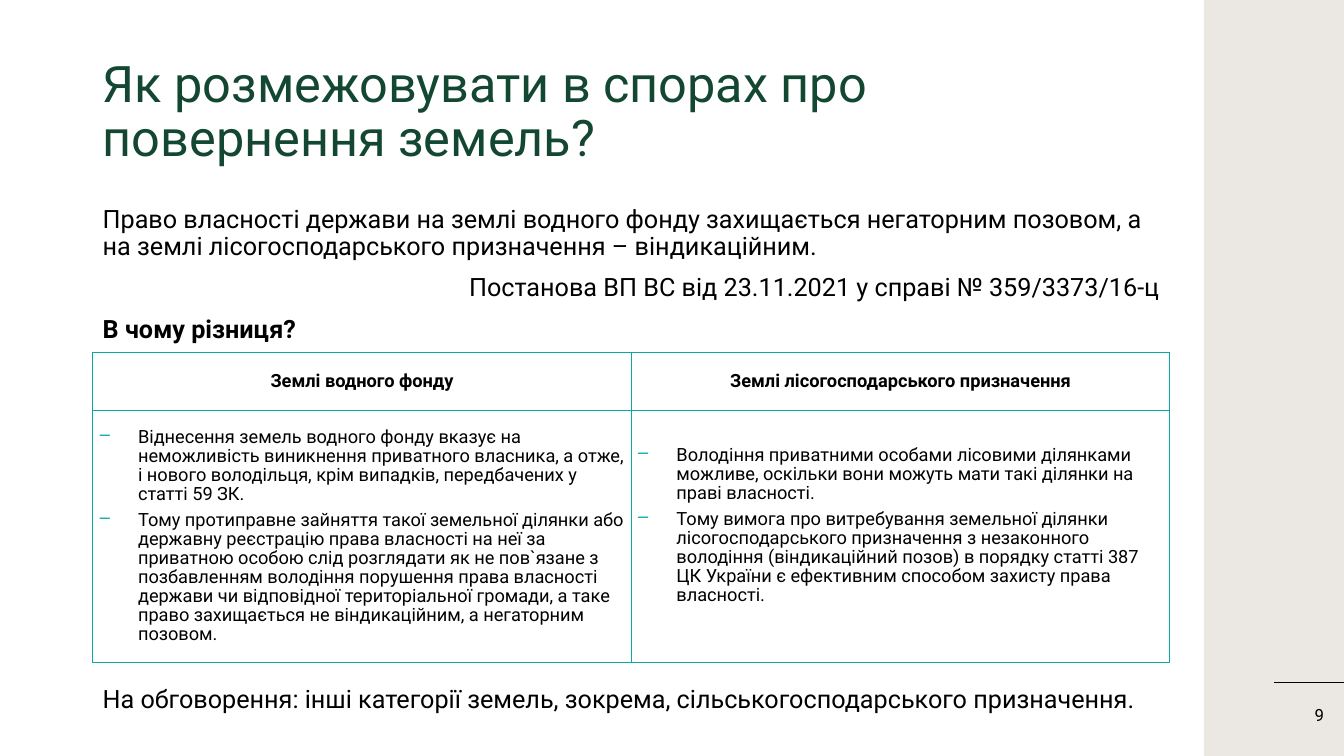
from dataclasses import dataclass

from lxml import etree
from pptx import Presentation
from pptx.dml.color import RGBColor
from pptx.enum import shapes, text
from pptx.oxml import ns
from pptx.util import Inches, Pt

# Content
TITLE = "Як розмежовувати в спорах про повернення земель?"
INTRO = [
    ("Право власності держави на землі водного фонду захищається негаторним позовом, "
     "а на землі лісогосподарського призначення – віндикаційним.", "left", False),
    ("Постанова ВП ВС від 23.11.2021 у справі № 359/3373/16-ц", "right", False),
    ("В чому різниця?", "left", True),
]
LAND_TYPES = [
    ("Землі водного фонду", [
        "Віднесення земель водного фонду вказує на неможливість виникнення приватного "
        "власника, а отже, і нового володільця, крім випадків, передбачених у статті 59 ЗК.",
        "Тому протиправне зайняття такої земельної ділянки або державну реєстрацію права "
        "власності на неї за приватною особою слід розглядати як не пов`язане з "
        "позбавленням володіння порушення права власності держави чи відповідної "
        "територіальної громади, а таке право захищається не віндикаційним, а негаторним "
        "позовом.",
    ], 0),
    ("Землі лісогосподарського призначення", [
        "Володіння приватними особами лісовими ділянками можливе, оскільки вони можуть "
        "мати такі ділянки на праві власності.",
        "Тому вимога про витребування земельної ділянки лісогосподарського призначення з "
        "незаконного володіння (віндикаційний позов) в порядку статті 387 ЦК України є "
        "ефективним способом захисту права власності.",
    ], 0.21),  # last item: space kept free below the text, inches
]
DISCUSSION = [("На обговорення: інші категорії земель, зокрема, "
               "сільськогосподарського призначення.", "left", False)]
PAGE = "9"


@dataclass(frozen=True)
class Theme:
    font: str = "Roboto"
    ink: str = "000000"
    heading: str = "134732"
    accent: str = "0AA7A5"
    band: str = "EBE8E3"
    title_size: int = 36
    body_size: int = 18
    table_size: int = 13
    page_size: int = 12


THEME = Theme()
ALIGN = {"left": text.PP_ALIGN.LEFT, "right": text.PP_ALIGN.RIGHT,
         "center": text.PP_ALIGN.CENTER}
SLIDE_W, SLIDE_H = 13.33, 7.5
LEFT, WIDTH = 0.92, 10.68
BAND_W = 1.39
RULE_W, RULE_Y = 0.69, 6.77


def style(paragraph, size, color=THEME.ink, bold=False, align="left"):
    paragraph.alignment = ALIGN[align]
    font = paragraph.font
    font.name, font.size, font.bold = THEME.font, Pt(size), bold
    font.color.rgb = RGBColor.from_string(color)


def paragraph_at(frame, index):
    return frame.paragraphs[0] if index == 0 else frame.add_paragraph()


def add_xml(parent, xml):
    root = f'<r xmlns:a="{ns.nsuri("a")}">{xml}</r>'
    for element in etree.fromstring(root):
        parent.append(element)


def add_body(slide, top, height, lines):
    frame = slide.shapes.add_textbox(
        Inches(LEFT), Inches(top), Inches(WIDTH), Inches(height)).text_frame
    frame.word_wrap = True
    for i, (words, align, bold) in enumerate(lines):
        paragraph = paragraph_at(frame, i)
        paragraph.text = words
        paragraph.line_spacing = 0.9
        paragraph.space_before = Pt(10 if i else 0)
        style(paragraph, THEME.body_size, bold=bold, align=align)


def format_cell(cell, bottom=0):
    cell.vertical_anchor = text.MSO_ANCHOR.MIDDLE
    cell.margin_left = cell.margin_right = Inches(0.07)
    cell.margin_top, cell.margin_bottom = 0, Inches(bottom)
    for side in "LRTB":
        add_xml(cell._tc.get_or_add_tcPr(),
                f'<a:ln{side} w="{Pt(1)}"><a:solidFill><a:srgbClr val="{THEME.accent}"/>'
                f'</a:solidFill></a:ln{side}>')
    cell.fill.background()


def add_bullet(paragraph):
    properties = paragraph._p.get_or_add_pPr()
    properties.set("marL", str(Inches(0.38)))
    properties.set("indent", str(-Inches(0.38)))
    add_xml(properties,
            f'<a:buClr><a:srgbClr val="{THEME.accent}"/></a:buClr><a:buChar char="–"/>'
            f'<a:tabLst><a:tab pos="{Inches(0.22)}" algn="l"/></a:tabLst>')


def add_comparison(slide):
    table = slide.shapes.add_table(2, len(LAND_TYPES), Inches(LEFT), Inches(3.5),
                                   Inches(WIDTH), Inches(3.07)).table
    table.first_row = table.horz_banding = False
    table.rows[0].height, table.rows[1].height = Inches(0.57), Inches(2.5)
    for column, (land, points, bottom) in enumerate(LAND_TYPES):
        table.columns[column].width = Inches(WIDTH / len(LAND_TYPES))
        header, details = table.cell(0, column), table.cell(1, column)
        format_cell(header)
        header.text = land
        style(header.text_frame.paragraphs[0], THEME.table_size, bold=True, align="center")
        format_cell(details, bottom)
        for i, point in enumerate(points):
            paragraph = paragraph_at(details.text_frame, i)
            paragraph.text = point
            add_bullet(paragraph)
            paragraph.line_spacing = 0.9
            paragraph.space_before = Pt(5 if i else 0)
            style(paragraph, THEME.table_size)


def add_side_band(slide):
    band = slide.shapes.add_shape(
        shapes.MSO_SHAPE.RECTANGLE, Inches(SLIDE_W - BAND_W), 0,
        Inches(BAND_W), Inches(SLIDE_H))
    band.shadow.inherit = False
    band.fill.solid()
    band.fill.fore_color.rgb = RGBColor.from_string(THEME.band)
    band.line.fill.background()

    number = slide.shapes.add_textbox(
        Inches(12.05), Inches(RULE_Y), Inches(1.18), Inches(0.65)).text_frame
    number.word_wrap = True
    number.vertical_anchor = text.MSO_ANCHOR.MIDDLE
    number.text = PAGE
    style(number.paragraphs[0], THEME.page_size, align="right")

    rule = slide.shapes.add_connector(
        shapes.MSO_CONNECTOR.STRAIGHT, Inches(SLIDE_W - RULE_W), Inches(RULE_Y),
        Inches(SLIDE_W), Inches(RULE_Y))
    rule.line.color.rgb = RGBColor.from_string(THEME.ink)
    rule.line.width = Pt(0.5)
    add_xml(rule._element.spPr, "<a:effectLst/>")


def add_title(slide):
    title = slide.shapes.title
    title.left, title.top = Inches(LEFT), Inches(0.4)
    title.width, title.height = Inches(WIDTH), Inches(1.45)
    frame = title.text_frame
    frame.text = TITLE
    frame.word_wrap = True
    frame.auto_size = text.MSO_AUTO_SIZE.NONE
    frame.vertical_anchor = text.MSO_ANCHOR.MIDDLE
    frame.paragraphs[0].line_spacing = 0.9
    style(frame.paragraphs[0], THEME.title_size, THEME.heading)


def main():
    deck = Presentation()
    deck.slide_width, deck.slide_height = Inches(SLIDE_W), Inches(SLIDE_H)
    slide = deck.slides.add_slide(deck.slide_layouts[5])
    add_side_band(slide)
    add_title(slide)
    add_body(slide, 2, 1.45, INTRO)
    add_comparison(slide)
    add_body(slide, 6.76, 0.4, DISCUSSION)
    deck.save("out.pptx")


if __name__ == "__main__":
    main()
